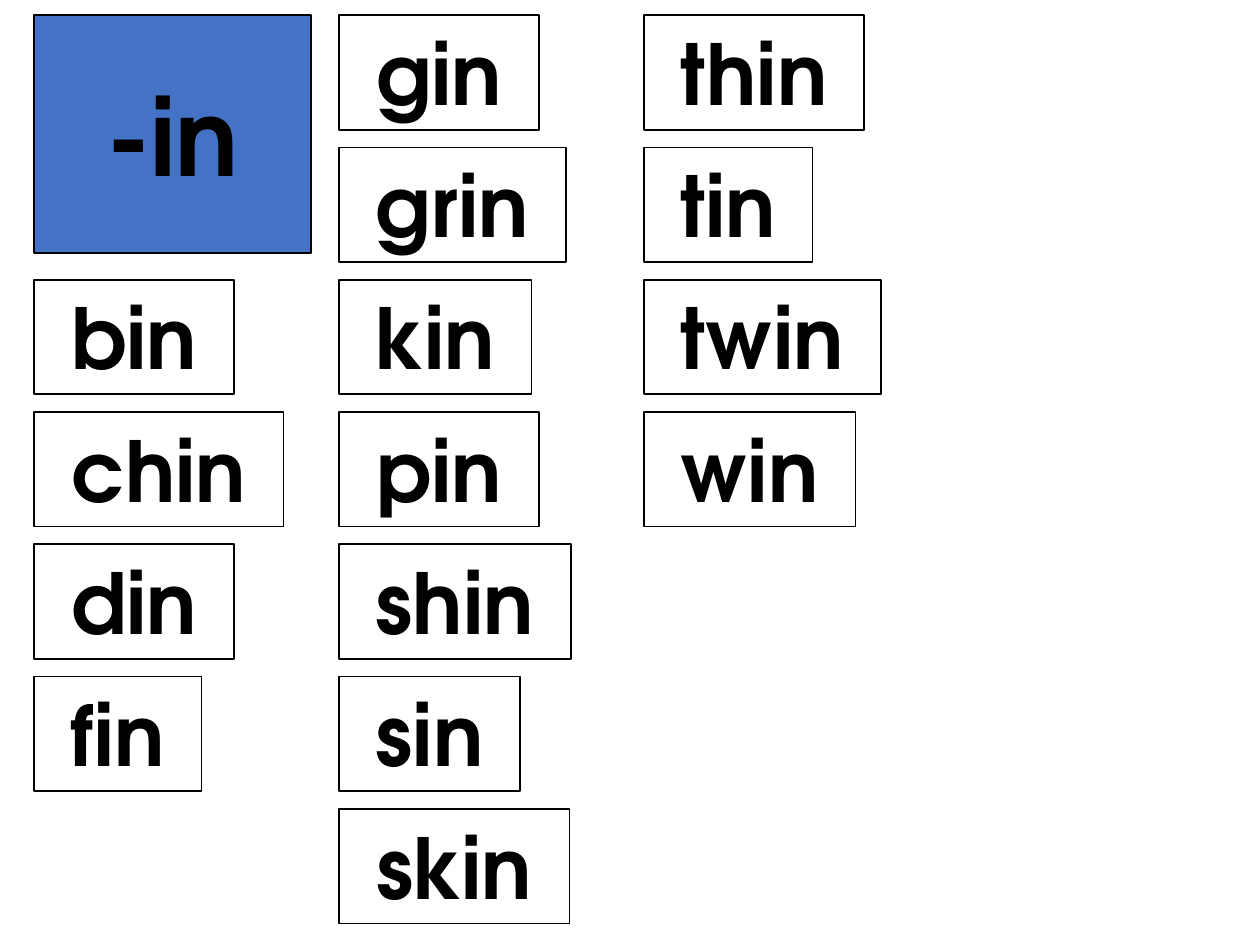
from pptx import Presentation
from pptx.dml.color import RGBColor
from pptx.enum.shapes import MSO_SHAPE
from pptx.enum.text import MSO_ANCHOR, MSO_AUTO_SIZE, PP_ALIGN
from pptx.util import Inches, Pt

COLORS = {"heading": "4472C4", "card": "FFFFFF", "ink": "000000"}
FONT = {"name": "TeX Gyre Adventor", "bold": True}

# Grid, in inches
LEFT, TOP = 0.27, 0.12
COLUMN_PITCH, ROW_PITCH = 2.42, 1.05
CARD_HEIGHT = 0.91
HEADING_SIZE = (2.2, 1.89)

# For each column: its first row, then the words with their card widths
WORD_COLUMNS = [
    (2, {"bin": 1.59, "chin": 1.98, "din": 1.59, "fin": 1.33}),
    (0, {"gin": 1.59, "grin": 1.8, "kin": 1.53, "pin": 1.59,
         "shin": 1.84, "sin": 1.44, "skin": 1.83}),
    (0, {"thin": 1.75, "tin": 1.34, "twin": 1.88, "win": 1.68}),
]


def color(name):
    return RGBColor.from_string(COLORS[name])


def format_box(shape, text, fill, size, anchor, wrap):
    shape.fill.solid()
    shape.fill.fore_color.rgb = color(fill)
    shape.line.color.rgb = color("ink")
    shape.line.width = Pt(1)
    frame = shape.text_frame
    frame_format = {"text": text, "auto_size": MSO_AUTO_SIZE.NONE,
                    "word_wrap": wrap, "vertical_anchor": anchor}
    for attribute, value in frame_format.items():
        setattr(frame, attribute, value)
    paragraph = frame.paragraphs[0]
    paragraph.alignment = PP_ALIGN.CENTER
    font = paragraph.runs[0].font
    for attribute, value in {**FONT, "size": Pt(size)}.items():
        setattr(font, attribute, value)
    font.color.rgb = color("ink")


def place_heading(slide, left, top, width, height):
    title = slide.shapes.title
    box = {"left": left, "top": top, "width": width, "height": height}
    for attribute, value in box.items():
        setattr(title, attribute, Inches(value))
    format_box(title, "-in", "heading", 60, MSO_ANCHOR.MIDDLE, True)


def place_word_column(slide, left, top, words):
    for row, (word, width) in enumerate(words.items()):
        box = (left, top + row * ROW_PITCH, width, CARD_HEIGHT)
        card = slide.shapes.add_shape(MSO_SHAPE.RECTANGLE, *map(Inches, box))
        card.shadow.inherit = False
        format_box(card, word, "card", 48, MSO_ANCHOR.TOP, False)


def main():
    presentation = Presentation()
    presentation.slide_width = Inches(10)
    presentation.slide_height = Inches(7.5)
    slide = presentation.slides.add_slide(presentation.slide_layouts[5])
    place_heading(slide, LEFT, TOP, *HEADING_SIZE)
    for column, (first_row, words) in enumerate(WORD_COLUMNS):
        place_word_column(slide, LEFT + column * COLUMN_PITCH,
                          TOP + first_row * ROW_PITCH, words)
    presentation.save("out.pptx")


if __name__ == "__main__":
    main()
